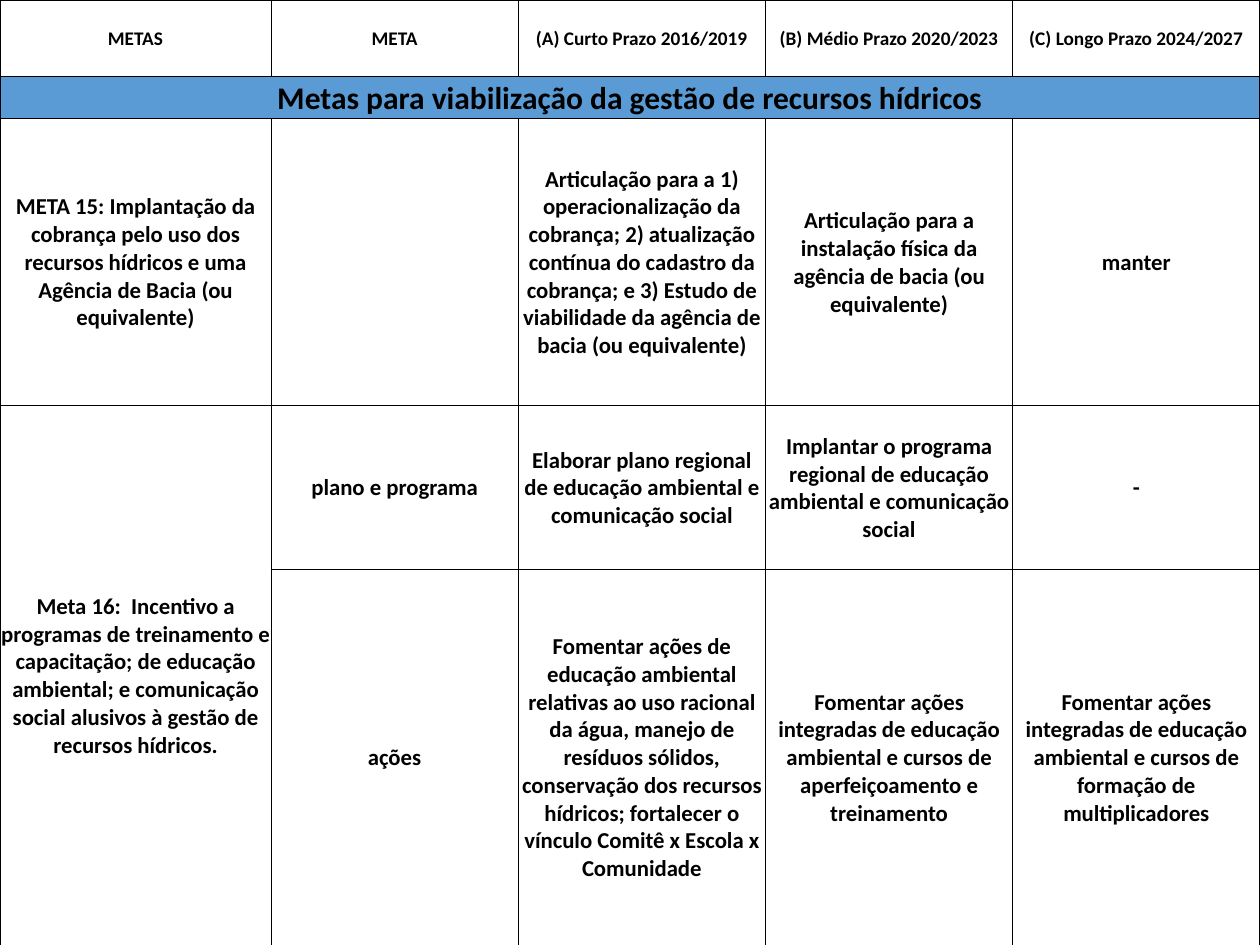
from dataclasses import dataclass

from lxml.etree import SubElement
from pptx import Presentation
from pptx.dml.color import RGBColor
from pptx.enum.text import MSO_ANCHOR as Anchor, PP_ALIGN as Align
from pptx.oxml.ns import qn
from pptx.table import Table, _Cell as Cell
from pptx.util import Inches, Pt

WIDTH, HEIGHT = 10, 7.5
FIRST_COL = 2.15
COLS = [FIRST_COL] + [(WIDTH - FIRST_COL) / 4] * 4
ROWS = [0.61, 0.33, 2.28, 1.3, 2.98]
BLACK, WHITE, BLUE = "000000", "FFFFFF", "5B9BD5"
CELL_FORMAT = dict(
    vertical_anchor=Anchor.MIDDLE,
    margin_left=Inches(0.01),
    margin_right=Inches(0.01),
    margin_top=Inches(0.01),
    margin_bottom=0,
)


@dataclass
class Entry:
    row: int
    col: int
    text: str
    rows: int = 1
    cols: int = 1


SIZES = [11, 18, 13, 13, 13]
HEADINGS = [
    "METAS",
    "META",
    "(A) Curto Prazo 2016/2019",
    "(B) Médio Prazo 2020/2023",
    "(C) Longo Prazo 2024/2027",
]
ENTRIES = [Entry(0, col, text) for col, text in enumerate(HEADINGS)] + [
    Entry(1, 0, "Metas para viabilização da gestão de recursos hídricos", cols=5),
    Entry(2, 0, "META 15: Implantação da cobrança pelo uso dos recursos hídricos "
                "e uma Agência de Bacia (ou equivalente)"),
    Entry(2, 2, "Articulação para a 1) operacionalização da cobrança; "
                "2) atualização contínua do cadastro da cobrança; e 3) Estudo "
                "de viabilidade da agência de bacia (ou equivalente)"),
    Entry(2, 3, "Articulação para a instalação física da agência de bacia "
                "(ou equivalente)"),
    Entry(2, 4, "manter"),
    Entry(3, 0, "Meta 16:  Incentivo a programas de treinamento e capacitação; "
                "de educação ambiental; e comunicação social alusivos à gestão "
                "de recursos hídricos.", rows=2),
    Entry(3, 1, "plano e programa"),
    Entry(3, 2, "Elaborar plano regional de educação ambiental e comunicação social"),
    Entry(3, 3, "Implantar o programa regional de educação ambiental e "
                "comunicação social"),
    Entry(3, 4, "-"),
    Entry(4, 1, "ações"),
    Entry(4, 2, "Fomentar ações de educação ambiental relativas ao uso racional "
                "da água, manejo de resíduos sólidos, conservação dos recursos "
                "hídricos; fortalecer o vínculo Comitê x Escola x Comunidade"),
    Entry(4, 3, "Fomentar ações integradas de educação ambiental e cursos de "
                "aperfeiçoamento e treinamento"),
    Entry(4, 4, "Fomentar ações integradas de educação ambiental e cursos de "
                "formação de multiplicadores"),
]


def rgb(value: str) -> RGBColor:
    return RGBColor.from_string(value)


def set_all(target: object, values: dict) -> None:
    for name, value in values.items():
        setattr(target, name, value)


def add_borders(cell: Cell, color: str, width: float) -> None:
    tc_pr = cell._tc.get_or_add_tcPr()
    for side in ("lnL", "lnR", "lnT", "lnB"):
        ln = SubElement(tc_pr, qn(f"a:{side}"), w=str(Pt(width)))
        fill = SubElement(ln, qn("a:solidFill"))
        SubElement(fill, qn("a:srgbClr"), val=color)


def format_cell(cell: Cell, color: str) -> None:
    set_all(cell, CELL_FORMAT)
    add_borders(cell, BLACK, 0.5)
    cell.fill.solid()
    cell.fill.fore_color.rgb = rgb(color)


def write_entry(table: Table, entry: Entry) -> None:
    cell = table.cell(entry.row, entry.col)
    if entry.rows * entry.cols > 1:
        cell.merge(table.cell(entry.row + entry.rows - 1, entry.col + entry.cols - 1))
    p = cell.text_frame.paragraphs[0]
    p.alignment = Align.CENTER
    r = p.add_run()
    r.text = entry.text
    set_all(r.font, dict(name="Calibri", size=Pt(SIZES[entry.row]), bold=True))
    r.font.color.rgb = rgb(BLACK)


def main() -> None:
    prs = Presentation()
    set_all(prs, dict(slide_width=Inches(WIDTH), slide_height=Inches(HEIGHT)))
    s = prs.slides.add_slide(prs.slide_layouts[6])
    table = s.shapes.add_table(
        len(ROWS), len(COLS), 0, 0, prs.slide_width, prs.slide_height
    ).table
    set_all(table, dict(first_row=False, horz_banding=False))
    for column, width in zip(table.columns, COLS):
        column.width = Inches(width)
    for i, height in enumerate(ROWS):
        table.rows[i].height = Inches(height)
        for cell in table.rows[i].cells:
            format_cell(cell, BLUE if i == 1 else WHITE)
    for entry in ENTRIES:
        write_entry(table, entry)
    prs.save("out.pptx")


if __name__ == "__main__":
    main()
